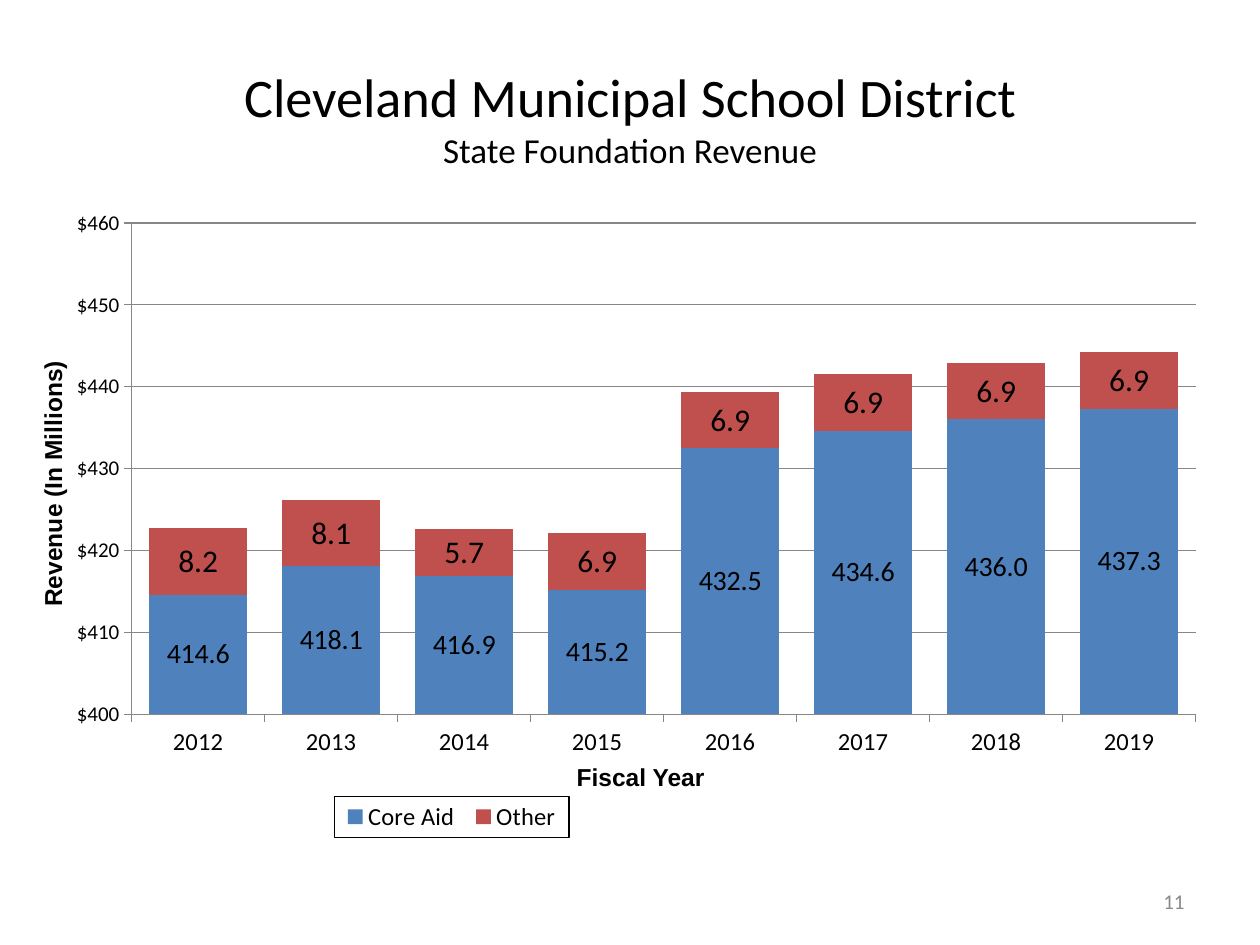
from lxml import etree
from pptx import Presentation
from pptx.chart.data import CategoryChartData
from pptx.dml.color import RGBColor
from pptx.enum.chart import XL_CHART_TYPE, XL_LABEL_POSITION, XL_LEGEND_POSITION, XL_TICK_MARK
from pptx.enum.text import MSO_ANCHOR, PP_ALIGN
from pptx.oxml import parse_xml
from pptx.oxml.ns import nsdecls, qn
from pptx.util import Inches, Pt

STACKED = XL_CHART_TYPE.COLUMN_STACKED
LABEL_CENTER = XL_LABEL_POSITION.CENTER
LEGEND_BOTTOM = XL_LEGEND_POSITION.BOTTOM
TICK_OUT, TICK_NONE = XL_TICK_MARK.OUTSIDE, XL_TICK_MARK.NONE
TOP, MIDDLE = MSO_ANCHOR.TOP, MSO_ANCHOR.MIDDLE
CENTER, RIGHT = PP_ALIGN.CENTER, PP_ALIGN.RIGHT

BLACK, GRAY, AXIS_GRAY = "000000", "898989", "878787"
YEARS = [str(year) for year in range(2012, 2020)]
SERIES = [
    ("Core Aid", [414.6, 418.1, 416.9, 415.2, 432.5, 434.6, 436.0, 437.3], "4F81BD", 16),
    ("Other", [8.2, 8.1, 5.7, 6.9, 6.9, 6.9, 6.9, 6.9], "C0504D", 18),
]


def rgb(value):
    """Turn a hex string into a colour."""
    return RGBColor.from_string(value)


def set_font(font, size, name="Calibri", color=BLACK, bold=False):
    """Apply size, typeface, weight and colour to a font."""
    for key, value in {"size": Pt(size), "name": name, "bold": bold}.items():
        setattr(font, key, value)
    font.color.rgb = rgb(color)


def add_text(slide, box, lines, align=CENTER, anchor=TOP, rotation=0, **style):
    """Add a text box whose (text, size) lines share one paragraph."""
    sp = slide.shapes.add_textbox(*map(Inches, box))
    sp.rotation = rotation
    tf = sp.text_frame
    for key, value in {"word_wrap": True, "vertical_anchor": anchor}.items():
        setattr(tf, key, value)
    p = tf.paragraphs[0]
    p.alignment = align
    for index, (text, size) in enumerate(lines):
        if index:
            p.add_line_break()
        r = p.add_run()
        r.text = text
        set_font(r.font, size, **style)


def make_layout(x, y, w, h, inner=False):
    """Build a manual chart layout from fractions of the chart area."""
    layout = parse_xml(f"<c:layout {nsdecls('c')}><c:manualLayout/></c:layout>")
    values = {"layoutTarget": "inner"} if inner else {}
    values |= {"xMode": "edge", "yMode": "edge", "x": x, "y": y, "w": w, "h": h}
    for tag, value in values.items():
        etree.SubElement(layout[0], qn(f"c:{tag}")).set("val", str(value))
    return layout


def replace_layout(parent, index, layout):
    """Put a layout in place of any that the parent has."""
    for old in parent.findall(qn("c:layout")):
        parent.remove(old)
    parent.insert(index, layout)


def format_axes(chart):
    """Set scale, ticks, lines and fonts of both axes."""
    value_axis, category_axis = chart.value_axis, chart.category_axis
    scale = {"minimum_scale": 400, "maximum_scale": 460, "major_unit": 10,
             "has_major_gridlines": True}
    for key, value in scale.items():
        setattr(value_axis, key, value)
    labels = value_axis.tick_labels
    labels.number_format, labels.number_format_is_linked = '"$"#,##0', False
    for axis, size in ((value_axis, 12), (category_axis, 14)):
        axis.major_tick_mark, axis.minor_tick_mark = TICK_OUT, TICK_NONE
        set_font(axis.tick_labels.font, size)
    for item in (value_axis, category_axis, value_axis.major_gridlines):
        item.format.line.color.rgb = rgb(AXIS_GRAY)
        item.format.line.width = Pt(0.75)


def format_series(plot):
    """Colour each series and label its values."""
    plot.gap_width, plot.overlap, plot.vary_by_categories = 35, 100, False
    for series, (_, _, color, size) in zip(plot.series, SERIES):
        series.format.fill.solid()
        series.format.fill.fore_color.rgb = rgb(color)
        labels = series.data_labels
        options = {"show_value": True, "number_format": "0.0",
                   "number_format_is_linked": False, "position": LABEL_CENTER}
        for key, value in options.items():
            setattr(labels, key, value)
        set_font(labels.font, size)


def format_legend(chart):
    """Place a framed legend below the plot."""
    chart.has_legend = True
    legend = chart.legend
    legend.position, legend.include_in_layout = LEGEND_BOTTOM, False
    set_font(legend.font, 14)
    element = legend._element
    replace_layout(element, 1, make_layout(0.25, 0.93, 0.2, 0.065))
    frame = parse_xml(
        f"<c:spPr {nsdecls('c', 'a')}><a:ln w='9525'><a:solidFill>"
        f"<a:srgbClr val='{BLACK}'/></a:solidFill></a:ln></c:spPr>")
    element.find(qn("c:txPr")).addprevious(frame)


def add_revenue_chart(slide, box):
    """Add the stacked revenue chart and its axis titles in a box."""
    left, top, width, height = box
    data = CategoryChartData(number_format="0.0")
    data.categories = YEARS
    for name, values, _, _ in SERIES:
        data.add_series(name, values)
    chart = slide.shapes.add_chart(STACKED, *map(Inches, box), data).chart
    chart.has_title = False
    set_font(chart.font, 18)
    format_axes(chart)
    format_series(chart.plots[0])
    format_legend(chart)
    plot_area = chart._chartSpace.chart.plotArea
    replace_layout(plot_area, 0, make_layout(0.077, 0.019, 0.908, 0.781, inner=True))
    title_style = {"name": "Arial", "bold": True}
    add_text(slide, (left - 1.41, top + 2, 3, 0.34), [("Revenue (In Millions)", 14)],
             rotation=270, **title_style)
    add_text(slide, (left + 3.42, top + 4.33, 2.67, 0.34), [("Fiscal Year", 14)],
             **title_style)


def main():
    """Build and save the revenue slide."""
    prs = Presentation()
    prs.slide_width, prs.slide_height = Inches(10), Inches(7.5)
    slide = prs.slides.add_slide(prs.slide_layouts[6])
    add_text(slide, (0.5, 0.3, 9, 1.25),
             [("Cleveland Municipal School District", 31), ("State Foundation Revenue", 20)],
             anchor=MIDDLE)
    add_text(slide, (7.17, 6.95, 2.33, 0.4), [("11", 12)], RIGHT, MIDDLE, color=GRAY)
    add_revenue_chart(slide, (0.33, 1.67, 9.3, 5))
    prs.save("out.pptx")


if __name__ == "__main__":
    main()
